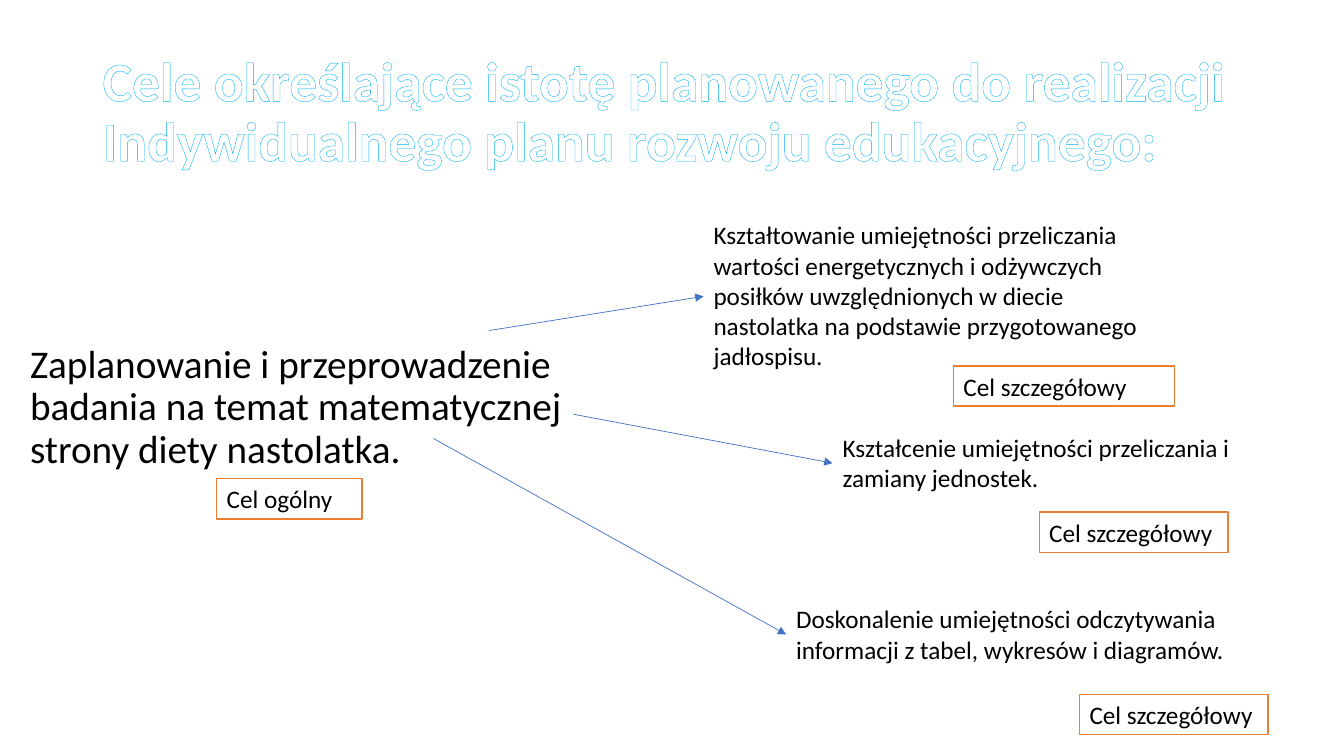
from dataclasses import dataclass

from lxml import etree
from pptx import Presentation, util as u
from pptx.dml.color import RGBColor
from pptx.enum import shapes, text
from pptx.oxml.ns import qn


@dataclass(frozen=True)
class Theme:
    face: str = "Calibri"
    ink: str = "000000"
    white: str = "FFFFFF"
    glow: str = "00B0F0"
    edge: str = "ED7D31"
    arrow: str = "4472C4"
    title: float = 39.6
    main: int = 28
    small: int = 18


T = Theme()
WIDE, HIGH = u.Inches(13.33), u.Inches(7.5)
TAG_H = 5.33  # rows

# Each goal: text lines, box, tag (column, row, width), arrow start
GOALS = [
    (["Kształtowanie umiejętności przeliczania",
      "wartości energetycznych i odżywczych",
      "posiłków uwzględnionych w diecie",
      "nastolatka na podstawie przygotowanego",
      "jadłospisu."],
     (52.35, 28.4, 46, 21.6), (70.95, 48.4, 16.43), (36.38, 43.73)),
    (["Kształcenie umiejętności przeliczania i",
      "zamiany jednostek."],
     (61.95, 56.53, 30.75, 9.47), (77.33, 67.73, 14.03), (42.68, 54.8)),
    (["Doskonalenie umiejętności odczytywania",
      "informacji z tabel, wykresów i diagramów."],
     (58.5, 79.2, 34.2, 9.47), (80.33, 91.87, 14.03), (32.25, 58)),
]


# The slide is a grid of 100 columns by 100 rows
def col(n):
    return round(WIDE * n / 100)


def row(n):
    return round(HIGH * n / 100)


def area(x, y, w, h):
    return col(x), row(y), col(w), row(h)


def rgb(code):
    return RGBColor.from_string(code)


def style(font, size, color, bold=False):
    font.name, font.size, font.bold = T.face, u.Pt(size), bold
    font.color.rgb = rgb(color)


def write(frame, lines, size):
    frame.word_wrap = True
    frame.vertical_anchor = text.MSO_ANCHOR.TOP
    for i, line in enumerate(lines):
        par = frame.add_paragraph() if i else frame.paragraphs[0]
        par.text = line
        par.alignment = text.PP_ALIGN.LEFT
        style(par.font, size, T.ink)


def block(page, box, lines, size):
    frame = page.shapes.add_textbox(*area(*box)).text_frame
    write(frame, lines, size)
    return frame


def tag(page, x, y, w, label):
    rect = page.shapes.add_shape(shapes.MSO_SHAPE.RECTANGLE, *area(x, y, w, TAG_H))
    rect.shadow.inherit = False
    rect.fill.solid()
    rect.fill.fore_color.rgb = rgb(T.white)
    rect.line.color.rgb = rgb(T.edge)
    rect.line.width = u.Pt(1)
    write(rect.text_frame, [label], T.small)


def arrow(page, start, end):
    link = page.shapes.add_connector(
        shapes.MSO_CONNECTOR.STRAIGHT,
        col(start[0]), row(start[1]), col(end[0]), row(end[1]))
    link.line.color.rgb = rgb(T.arrow)
    link.line.width = u.Pt(0.5)
    etree.SubElement(link.line._get_or_add_ln(), qn("a:tailEnd"), type="triangle")
    etree.SubElement(link._element.spPr, qn("a:effectLst"))


def heading(page, box, words):
    frame = page.shapes.add_textbox(*area(*box)).text_frame
    frame.word_wrap = True
    frame.vertical_anchor = text.MSO_ANCHOR.MIDDLE
    par = frame.paragraphs[0]
    par.line_spacing = 0.9
    run = par.add_run()
    run.text = words
    style(run.font, T.title, T.white, True)
    # Outlined letters
    rim = etree.Element(qn("a:ln"), w=str(u.Pt(0.52)))
    fill = etree.SubElement(rim, qn("a:solidFill"))
    etree.SubElement(fill, qn("a:srgbClr"), val=T.glow)
    run._r.get_or_add_rPr().insert(0, rim)


def main():
    deck = Presentation()
    deck.slide_width, deck.slide_height = WIDE, HIGH
    page = deck.slides.add_slide(deck.slide_layouts[6])

    # Title
    heading(page, (6.9, 5.33, 86.25, 19.33),
            "Cele określające istotę planowanego do realizacji "
            "Indywidualnego planu rozwoju edukacyjnego:")

    # General goal
    aim = block(page, (1.5, 44.93, 44.03, 25.47),
                ["Zaplanowanie i przeprowadzenie badania na temat "
                 "matematycznej strony diety nastolatka."], T.main)
    aim.paragraphs[0].line_spacing = 0.9
    tag(page, 16.13, 63.33, 10.8, "Cel ogólny")

    # Specific goals, each reached by an arrow at its left middle
    for lines, box, spot, start in GOALS:
        block(page, box, lines, T.small)
        tag(page, *spot, "Cel szczegółowy")
        arrow(page, start, (box[0], box[1] + box[3] / 2))

    deck.save("out.pptx")


if __name__ == "__main__":
    main()
